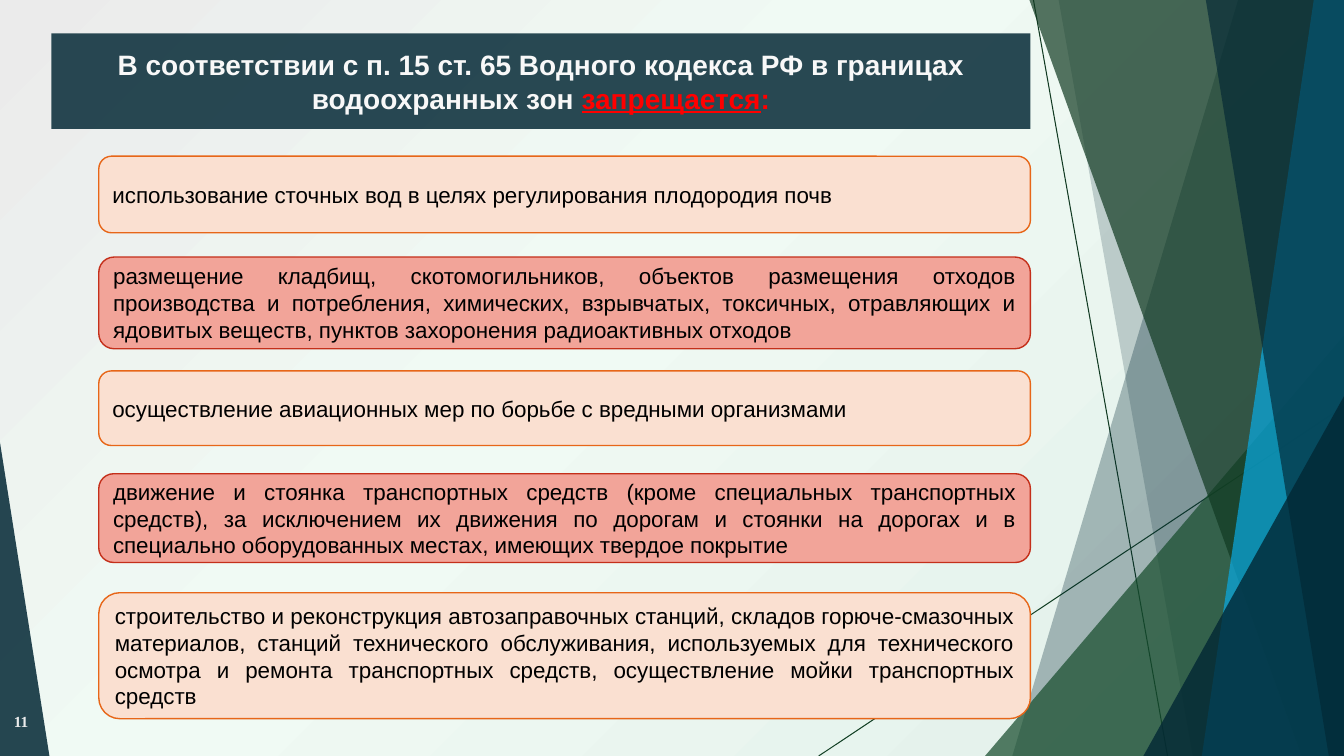
from dataclasses import dataclass

from pptx import Presentation, util as u
from pptx.dml.color import RGBColor
from pptx.enum import shapes, text
from pptx.oxml import parse_xml
from pptx.oxml.ns import nsdecls, qn
from lxml import etree

WIDTH, HEIGHT = 13.33, 7.5


@dataclass(frozen=True)
class Theme:
    font: str = "Arial"
    number_font: str = "Times New Roman"
    title_size: float = 20
    rule_size: float = 16
    number_size: float = 11
    navy: str = "022734"
    green: str = "113A22"
    light_green: str = "174D2D"
    line_green: str = "144126"
    sky: str = "09ABE4"
    title_ink: str = "F8F8F8"
    alarm: str = "FF0000"
    ink: str = "000000"
    number_ink: str = "EBEBEB"
    peach: tuple = ("FAE0D1", "E76618")
    coral: tuple = ("F2A499", "C42F1A")
    backdrop: tuple = ((0, "E1EFE9"), (58, "F0FAF4"), (100, "EBEBEB"))


THEME = Theme()

TITLE = [
    ("В соответствии с п. 15 ст. 65 Водного кодекса РФ в границах водоохранных зон ",
     THEME.title_ink, False),
    ("запрещается", THEME.alarm, True),
    (":", THEME.alarm, False),
]
TITLE_BOX = (0.51, 0.33, 9.71, 0.95)
# top, height, wording; the two colour pairs alternate
RULES = [
    (1.55, 0.76, "использование сточных вод в целях регулирования плодородия почв"),
    (2.55, 0.91, "размещение кладбищ, скотомогильников, объектов размещения отходов "
                 "производства и потребления, химических, взрывчатых, токсичных, "
                 "отравляющих и ядовитых веществ, пунктов захоронения радиоактивных отходов"),
    (3.68, 0.74, "осуществление авиационных мер по борьбе с вредными организмами"),
    (4.7, 0.88, "движение и стоянка транспортных средств (кроме специальных транспортных "
                "средств), за исключением их движения по дорогам и стоянки на дорогах и в "
                "специально оборудованных местах, имеющих твердое покрытие"),
    (5.88, 1.25, "строительство и реконструкция автозаправочных станций, складов "
                 "горюче-смазочных материалов, станций технического обслуживания, "
                 "используемых для технического осмотра и ремонта транспортных средств, "
                 "осуществление мойки транспортных средств"),
]
RULE_LEFT, RULE_WIDTH = 0.98, 9.24
PAGE_NUMBER = "11"
NUMBER_BOX = (-0.37, 6.96, 0.75, 0.4)

RAYS = [
    ((10.25, 0), (11.58, HEIGHT), THEME.green),
    ((WIDTH, 4.03), (8.12, HEIGHT), THEME.line_green),
]
# Bands reach the right edge: (top x, bottom x); wedges: (left, top, width, apex)
FACETS = [
    ("band", (12.28, 10.04), THEME.navy, 30),
    ("band", (10.5, 11.83), THEME.navy, 20),
    ("wedge", (9.77, 3.33, 3.56, 1), THEME.light_green, 72),
    ("band", (10.21, 12.91), THEME.green, 70),
    ("band", (13.03, 11.92), THEME.sky, 70),
    ("band", (11.96, 13.18), THEME.navy, 65),
    ("wedge", (11.34, 3.93, 1.99, 1), THEME.navy, 80),
    ("wedge", (0, 4.39, 0.49, 0), THEME.navy, 85),
]


def inches(values):
    return [u.Inches(value) for value in values]


def paint(shape, color, opacity=100, outline=None):
    shape.fill.solid()
    shape.fill.fore_color.rgb = RGBColor.from_string(color)
    if opacity < 100:
        tint = shape._element.spPr.find(qn("a:solidFill"))[0]
        etree.SubElement(tint, qn("a:alpha")).set("val", str(opacity * 1000))
    if outline:
        shape.line.color.rgb = RGBColor.from_string(outline)
        shape.line.width = u.Pt(1)
    else:
        shape.line.fill.background()
    shape.shadow.inherit = False


def write(shape, words, size, color, align, font=THEME.font, bold=False, underline=False):
    frame = shape.text_frame
    frame.vertical_anchor = text.MSO_ANCHOR.MIDDLE
    frame.word_wrap = True
    paragraph = frame.paragraphs[0]
    paragraph.alignment = align
    run = paragraph.add_run()
    run.text = words
    run.font.name, run.font.size = font, u.Pt(size)
    run.font.bold, run.font.underline = bold, underline
    run.font.color.rgb = RGBColor.from_string(color)
    return run


def add_backdrop(slide):
    slide.background.fill.solid()
    stops = "".join(f'<a:gs pos="{pos * 1000}"><a:srgbClr val="{color}"/></a:gs>'
                    for pos, color in THEME.backdrop)
    gradient = parse_xml(
        f'<a:gradFill {nsdecls("a")} rotWithShape="1"><a:gsLst>{stops}</a:gsLst>'
        '<a:path path="circle"><a:fillToRect l="100000" t="100000"/></a:path></a:gradFill>')
    flat = next(slide._element.iter(qn("a:solidFill")))
    flat.getparent().replace(flat, gradient)


def add_ray(slide, start, end, color):
    ray = slide.shapes.add_connector(shapes.MSO_CONNECTOR.STRAIGHT,
                                     *inches(start), *inches(end))
    ray.line.color.rgb = RGBColor.from_string(color)
    ray.line.width = u.Pt(0.75)
    etree.SubElement(ray._element.spPr, qn("a:effectLst"))


def add_facet(slide, kind, place, color, opacity):
    if kind == "band":
        top_x, bottom_x = place
        corners = [(WIDTH, 0), (WIDTH, HEIGHT), (bottom_x, HEIGHT)]
        outline = slide.shapes.build_freeform(u.Inches(top_x), 0)
        outline.add_line_segments([inches(corner) for corner in corners], close=True)
        facet = outline.convert_to_shape()
    else:
        left, top, width, apex = place
        facet = slide.shapes.add_shape(shapes.MSO_SHAPE.ISOSCELES_TRIANGLE,
                                       *inches((left, top, width, HEIGHT - top)))
        facet.adjustments[0] = apex
    paint(facet, color, opacity)


def add_title(slide):
    title = slide.shapes.title
    title.left, title.top, title.width, title.height = inches(TITLE_BOX)
    title._element.spPr.append(parse_xml(
        f'<a:prstGeom {nsdecls("a")} prst="snip2DiagRect"><a:avLst>'
        '<a:gd name="adj1" fmla="val 0"/><a:gd name="adj2" fmla="val 50000"/>'
        '</a:avLst></a:prstGeom>'))
    paint(title, THEME.navy, 84)
    for words, color, underline in TITLE:
        write(title, words, THEME.title_size, color, text.PP_ALIGN.CENTER,
              bold=True, underline=underline)
    title.text_frame.auto_size = text.MSO_AUTO_SIZE.NONE


def add_rule(slide, index, top, height, words):
    fill, outline = (THEME.peach, THEME.coral)[index % 2]
    box = slide.shapes.add_shape(shapes.MSO_SHAPE.ROUNDED_RECTANGLE,
                                 *inches((RULE_LEFT, top, RULE_WIDTH, height)))
    paint(box, fill, outline=outline)
    write(box, words, THEME.rule_size, THEME.ink, text.PP_ALIGN.JUSTIFY)


def main():
    deck = Presentation()
    deck.slide_width, deck.slide_height = inches((WIDTH, HEIGHT))
    slide = deck.slides.add_slide(deck.slide_layouts[5])
    add_backdrop(slide)
    for ray in RAYS:
        add_ray(slide, *ray)
    for facet in FACETS:
        add_facet(slide, *facet)
    add_title(slide)
    for index, rule in enumerate(RULES):
        add_rule(slide, index, *rule)
    number = slide.shapes.add_textbox(*inches(NUMBER_BOX))
    write(number, PAGE_NUMBER, THEME.number_size, THEME.number_ink,
          text.PP_ALIGN.RIGHT, THEME.number_font, bold=True)
    deck.save("out.pptx")


if __name__ == "__main__":
    main()
